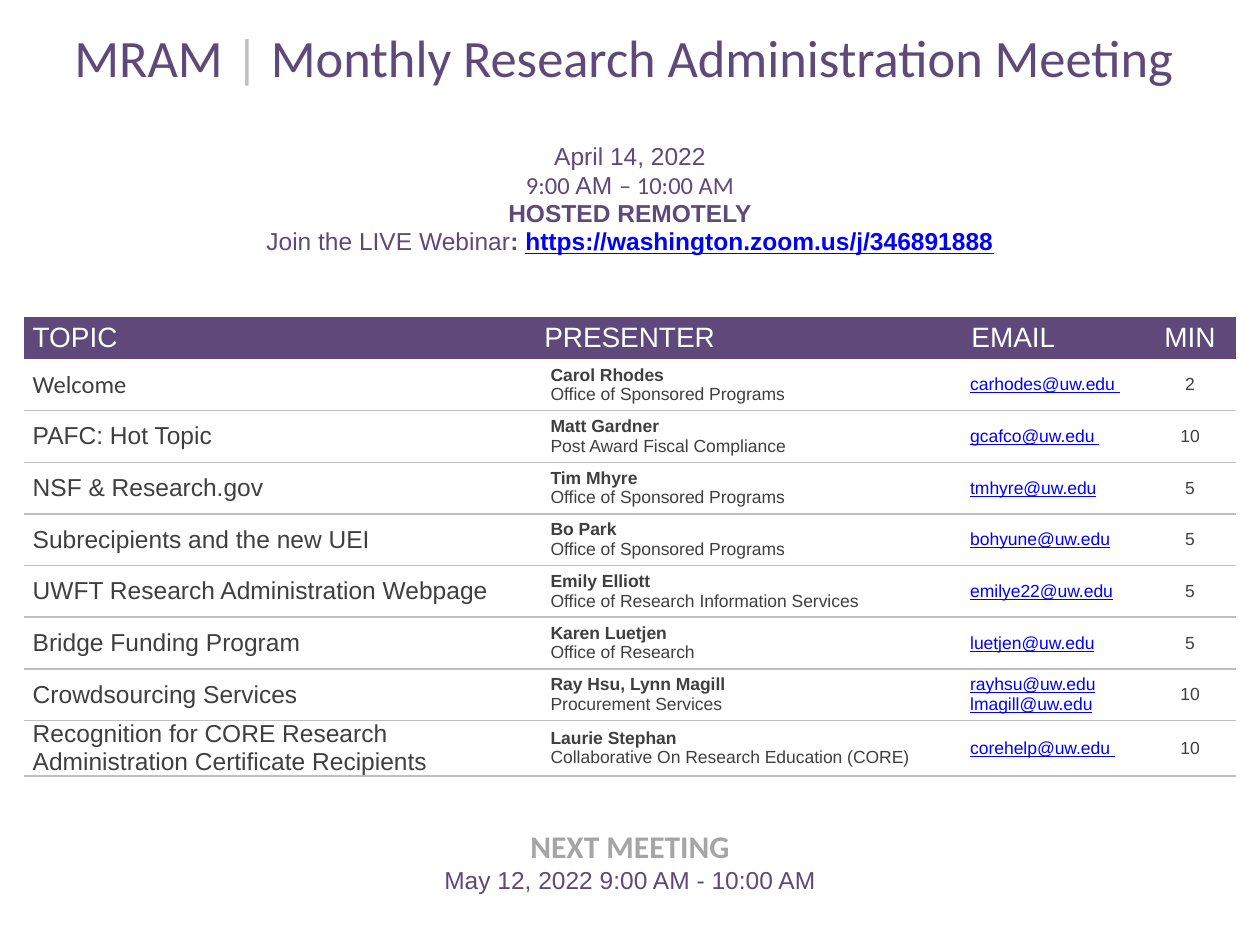
import pptx
import pptx.dml.color
import pptx.enum.text
import pptx.oxml
import pptx.oxml.ns
import pptx.util
from pptx.util import Inches

COLORS = {"purple": "5F497A", "gray": "BFBFBF", "next": "A5A5A5",
          "text": "3F3F3F", "link": "0000FF", "white": "FFFFFF"}
ALIGN = pptx.enum.text.PP_ALIGN
ANCHOR = pptx.enum.text.MSO_ANCHOR
NO_STYLE = "{2D5ABB26-0587-4C30-8999-92F81FD0307C}"
COLUMN_WIDTHS = [4.06, 3.33, 1.5, 0.73]
TOPICS = [
    ("Welcome", "Carol Rhodes", "Office of Sponsored Programs", ["carhodes@uw.edu "], "2"),
    ("PAFC: Hot Topic", "Matt Gardner", "Post Award Fiscal Compliance", ["gcafco@uw.edu "], "10"),
    ("NSF & Research.gov", "Tim Mhyre", "Office of Sponsored Programs", ["tmhyre@uw.edu"], "5"),
    ("Subrecipients and the new UEI", "Bo Park", "Office of Sponsored Programs",
     ["bohyune@uw.edu"], "5"),
    ("UWFT Research Administration Webpage", "Emily Elliott",
     "Office of Research Information Services", ["emilye22@uw.edu"], "5"),
    ("Bridge Funding Program", "Karen Luetjen", "Office of Research", ["luetjen@uw.edu"], "5"),
    ("Crowdsourcing Services", "Ray Hsu, Lynn Magill", "Procurement Services",
     ["rayhsu@uw.edu", "lmagill@uw.edu"], "10"),
    ("Recognition for CORE Research Administration Certificate Recipients", "Laurie Stephan",
     "Collaborative On Research Education (CORE)", ["corehelp@uw.edu "], "10"),
]
ROW_HEIGHTS = [0.62, 1.79, 0.33] + [0.41] * (len(TOPICS) - 1) + [0.44, 1.25]


class AgendaSlide:
    """Holds the slide and the text style of the meeting agenda."""

    def __init__(self, presentation):
        self.slide = presentation.slides.add_slide(presentation.slide_layouts[6])
        self.font_name = "Arial"

    def table(self, left, top, widths, heights):
        shape = self.slide.shapes.add_table(
            len(heights), len(widths), Inches(left), Inches(top),
            Inches(sum(widths)), Inches(sum(heights)))
        table = shape.table
        table.first_row = table.horz_banding = False
        table._tbl.tblPr.find(pptx.oxml.ns.qn("a:tableStyleId")).text = NO_STYLE
        for column, width in zip(table.columns, widths):
            column.width = Inches(width)
        for row, height in zip(table.rows, heights):
            row.height = Inches(height)
        return table

    def style(self, font, size=None, color=None, name=None, bold=None, underline=None):
        if size:
            font.size = pptx.util.Pt(size)
        if color:
            font.color.rgb = pptx.dml.color.RGBColor.from_string(COLORS[color])
        if name:
            font.name = name
        if bold is not None:
            font.bold = bold
        if underline is not None:
            font.underline = underline

    def cell(self, cell, paragraphs, fill="white", align=ALIGN.LEFT,
             anchor=ANCHOR.MIDDLE, margins=(0.07, 0, 0.07, 0)):
        (cell.margin_left, cell.margin_top,
         cell.margin_right, cell.margin_bottom) = map(Inches, margins)
        cell.vertical_anchor = anchor
        cell.fill.solid()
        cell.fill.fore_color.rgb = pptx.dml.color.RGBColor.from_string(COLORS[fill])
        frame = cell.text_frame
        for index, (runs, font) in enumerate(paragraphs):
            paragraph = frame.add_paragraph() if index else frame.paragraphs[0]
            paragraph.alignment = align
            self.style(paragraph.font, **{"name": self.font_name, **font})
            for text, run_font in [(runs, {})] if isinstance(runs, str) else runs:
                run = paragraph.add_run()
                run.text = text
                self.style(run.font, **run_font)

    def border(self, cell, side):
        line = pptx.oxml.parse_xml(
            f'<a:{side} {pptx.oxml.ns.nsdecls("a")} w="12700"><a:solidFill>'
            f'<a:srgbClr val="{COLORS["gray"]}"/></a:solidFill></a:{side}>')
        cell._tc.get_or_add_tcPr().insert(0, line)

    def banner(self, table, row, paragraphs, **options):
        table.cell(row, 0).merge(table.cell(row, len(table.columns) - 1))
        self.cell(table.cell(row, 0), paragraphs, align=ALIGN.CENTER, **options)

    def topic(self, table, row, topic, presenter, office, emails, minutes):
        first = topic == "Welcome"
        small = {"size": 10, "color": "text"}
        link = {"size": 10, "color": "link", "underline": True}
        cells = [table.cell(row, column) for column in range(len(table.columns))]
        self.cell(cells[0], [(topic, {"size": 14, "color": "text",
                                      "name": "Calibri" if first else "Arial"})])
        self.cell(cells[1], [(presenter, {**small, "bold": True}), (office, small)],
                  margins=(0.12, 0, 0.12, 0))
        self.cell(cells[2], [(email, link) for email in emails], margins=(0.12, 0, 0.12, 0))
        self.cell(cells[3], [(minutes, small)], align=ALIGN.CENTER)
        for cell in cells:
            self.border(cell, "lnB")
            if not first:
                self.border(cell, "lnT")


def main():
    presentation = pptx.Presentation()
    presentation.slide_width, presentation.slide_height = Inches(10), Inches(7.5)
    agenda = AgendaSlide(presentation)
    table = agenda.table(0.19, 0.11, COLUMN_WIDTHS, ROW_HEIGHTS)

    agenda.banner(table, 0, [(
        [("MRAM ", {"color": "purple"}), ("|", {"color": "gray"}),
         (" Monthly Research Administration Meeting ", {"color": "purple"})],
        {"size": 30, "name": "Calibri"})], anchor=ANCHOR.BOTTOM)

    detail = {"size": 14, "color": "purple"}
    calibri = {"name": "Calibri"}
    agenda.banner(table, 1, [
        ("April 14, 2022", detail),
        ([("9:00 ", calibri), ("AM ", {"name": "Arial"}), ("– 10:00 AM", calibri)], detail),
        ("HOSTED REMOTELY", {**detail, "bold": True}),
        ([("Join the LIVE Webinar", {}), (": ", {"bold": True}),
          ("https://washington.zoom.us/j/346891888",
           {"color": "link", "bold": True, "underline": True})], detail),
    ], anchor=ANCHOR.BOTTOM, margins=(0.07, 0, 0.07, 0.49))

    for column, heading in enumerate(["TOPIC", "PRESENTER", "EMAIL", "MIN"]):
        agenda.cell(table.cell(2, column), [(heading, {"size": 16, "color": "white"})],
                    fill="purple", align=ALIGN.CENTER if heading == "MIN" else ALIGN.LEFT,
                    margins=(0.13 if heading == "EMAIL" else 0.07, 0, 0.07, 0))

    for row, topic in enumerate(TOPICS, start=3):
        agenda.topic(table, row, *topic)

    last = len(ROW_HEIGHTS) - 1
    agenda.banner(table, last, [
        ("NEXT MEETING", {"size": 18, "color": "next", "name": "Calibri", "bold": True}),
        ("May 12, 2022 9:00 AM - 10:00 AM", detail),
    ], anchor=ANCHOR.TOP, margins=(0.07, 0.42, 0.07, 0))
    for column in range(len(COLUMN_WIDTHS)):
        agenda.border(table.cell(last, column), "lnT")

    presentation.save("out.pptx")


if __name__ == "__main__":
    main()
